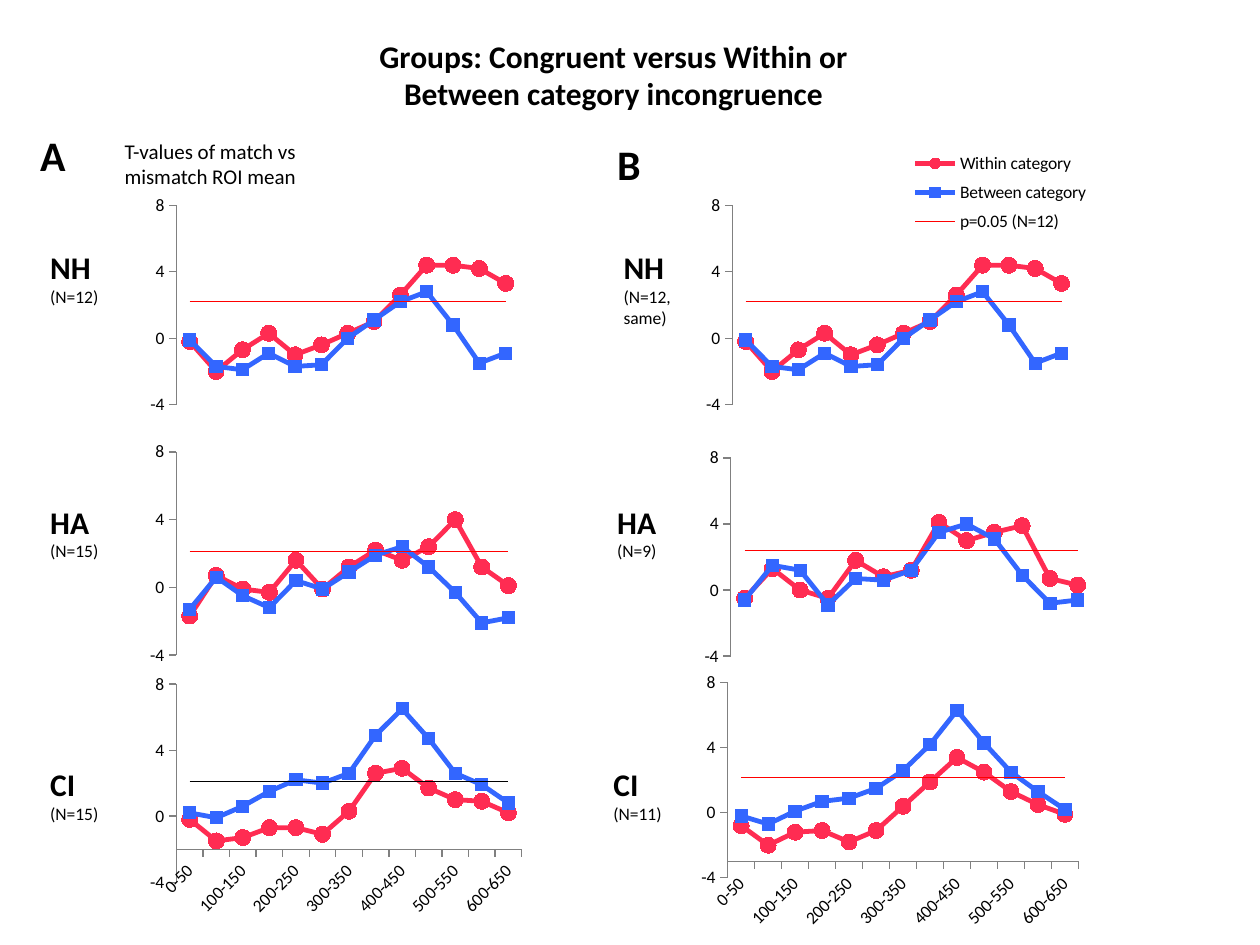
from lxml.etree import SubElement
from pptx import Presentation
from pptx.chart.data import CategoryChartData
from pptx.dml.color import RGBColor
from pptx.enum.chart import XL_CHART_TYPE, XL_LEGEND_POSITION, XL_MARKER_STYLE, XL_TICK_MARK
from pptx.enum.text import MSO_ANCHOR, MSO_AUTO_SIZE, PP_ALIGN
from pptx.oxml import parse_xml
from pptx.oxml.ns import nsdecls, qn
from pptx.util import Inches, Pt

# Content
TITLE = "Groups: Congruent versus Within or Between category incongruence"
FONT, BLACK, GREY, RED = "Calibri", "000000", "808080", "FF0000"
NUMBERS = [str(number) for number in range(1, 14)]
PERIODS = [f"{start}-{start + 50}" for start in range(0, 650, 50)]
PLAIN_NAMES = ["Series 1", "Series 2", "Series 3"]
LEGEND_NAMES = ["Within category", "Between category", "p=0.05 (N=12)"]
SERIES_STYLES = [  # colour, line width, marker, marker size
    ("FF2C52", 2.75, XL_MARKER_STYLE.CIRCLE, 9),
    ("3366FF", 2.75, XL_MARKER_STYLE.SQUARE, 7),
    (RED, 0.5, XL_MARKER_STYLE.NONE, None),
]

NH_WITHIN = [-0.2, -2, -0.7, 0.3, -1, -0.4, 0.3, 1, 2.6, 4.4, 4.4, 4.2, 3.3]
NH_BETWEEN = [-0.1, -1.7, -1.9, -0.9, -1.7, -1.6, 0, 1.1, 2.2, 2.8, 0.8, -1.5, -0.9]

# Chart frame in inches, plot area as fractions of the frame, then the values
CHARTS = [
    dict(frame=(1.07, 3.09, 3.27, 2.5), plot=(0.101, 0.199, 0.838, 0.645),
         within=[-1.7, 0.7, -0.1, -0.3, 1.6, -0.1, 1.2, 2.2, 1.6, 2.4, 4, 1.2, 0.1],
         between=[-1.3, 0.6, -0.5, -1.2, 0.4, -0.1, 0.9, 1.9, 2.4, 1.2, -0.3, -2.1, -1.8],
         threshold=2.1),
    dict(frame=(1.07, 4.89, 3.27, 2.5), plot=(0.101, 0.216, 0.838, 0.629),
         within=[-0.2, -1.5, -1.3, -0.7, -0.7, -1.1, 0.3, 2.6, 2.9, 1.7, 1, 0.9, 0.2],
         between=[0.2, -0.1, 0.6, 1.5, 2.2, 2, 2.6, 4.9, 6.5, 4.7, 2.6, 1.9, 0.8],
         threshold=2.1, threshold_color=BLACK, axis_at=-2),
    dict(frame=(0.83, 0.12, 5.66, 3.66), plot=(0.101, 0.413, 0.48, 0.432),
         within=NH_WITHIN, between=NH_BETWEEN, threshold=2.2),
    dict(frame=(5.36, 5.09, 3.81, 2.7), plot=(0.109, 0.122, 0.731, 0.573),
         within=[-0.8, -2, -1.2, -1.1, -1.8, -1.1, 0.4, 1.9, 3.4, 2.5, 1.3, 0.5, -0.1],
         between=[-0.2, -0.7, 0.1, 0.7, 0.9, 1.5, 2.6, 4.2, 6.3, 4.3, 2.5, 1.3, 0.2],
         threshold=2.2, axis_at=-3),
    dict(frame=(5.52, 3.4, 4, 2.2), plot=(0.07, 0.107, 0.716, 0.715),
         within=[-0.5, 1.3, 0, -0.5, 1.8, 0.8, 1.2, 4.1, 3, 3.5, 3.9, 0.7, 0.3],
         between=[-0.6, 1.5, 1.2, -0.9, 0.7, 0.6, 1.2, 3.5, 4, 3.1, 0.9, -0.8, -0.6],
         threshold=2.4),
    dict(frame=(5.31, 0.12, 5.66, 3.66), plot=(0.089, 0.413, 0.48, 0.432),
         within=NH_WITHIN, between=NH_BETWEEN, threshold=2.2,
         legend=(0.33, 0.28, 0.27, 0.21)),
]

GROUP_LABELS = [  # box in inches, group name, group size lines
    ((0.3, 1.92, 0.59, 0.59), "NH", ["(N=12)"]),
    ((0.3, 3.94, 0.59, 0.79), "HA", ["(N=15)"]),
    ((0.3, 6.02, 0.59, 0.91), "CI", ["(N=15)"]),
    ((4.85, 1.92, 0.58, 0.74), "NH", ["(N=12,", "same)"]),
    ((4.8, 3.94, 0.52, 0.77), "HA", ["(N=9)"]),
    ((4.77, 6.02, 0.59, 0.88), "CI", ["(N=11)"]),
]
PANEL_LETTERS = [((0.22, 0.98, 0.41, 0.5), "A"), ((4.8, 1.05, 0.39, 0.5), "B")]
AXIS_NOTE = ((0.89, 1.05, 1.97, 0.5), "T-values of match vs mismatch ROI mean")


def rgb(color):
    return RGBColor.from_string(color)


def set_font(font, size, bold=False, color=BLACK):
    font.name, font.size, font.bold = FONT, Pt(size), bold
    font.color.rgb = rgb(color)


def write(box, text, size, bold=False, align=PP_ALIGN.LEFT, new=False):
    frame = box.text_frame
    para = frame.add_paragraph() if new else frame.paragraphs[0]
    para.alignment = align
    span = para.add_run()
    span.text = text
    set_font(span.font, size, bold)


def add_box(slide, frame, wrap=False):
    box = slide.shapes.add_textbox(*map(Inches, frame))
    box.text_frame.word_wrap = wrap
    return box


def manual_layout(fractions, inner=False):
    layout = parse_xml(f"<c:layout {nsdecls('c')}><c:manualLayout/></c:layout>")
    settings = [("layoutTarget", "inner")] if inner else []
    settings += [("xMode", "edge"), ("yMode", "edge")]
    settings += zip("xywh", fractions)
    for name, value in settings:
        SubElement(layout[0], qn(f"c:{name}")).set("val", str(value))
    return layout


def no_fill():
    return parse_xml(f"<c:spPr {nsdecls('c', 'a')}><a:noFill/><a:ln><a:noFill/></a:ln></c:spPr>")


def style_axes(chart, axis_at):
    value_axis, category_axis = chart.value_axis, chart.category_axis
    value_axis.minimum_scale, value_axis.maximum_scale = -4, 8
    value_axis.major_unit = 4
    value_axis.has_major_gridlines = False
    for axis in (value_axis, category_axis):
        axis.major_tick_mark = XL_TICK_MARK.OUTSIDE
        axis.format.line.color.rgb = rgb(GREY)
        axis.format.line.width = Pt(0.75)
        set_font(axis.tick_labels.font, 10)
    category_axis.visible = axis_at is not None
    if category_axis.visible:
        value_axis.crosses_at = axis_at
        # Slanted labels, every second one
        body = category_axis.tick_labels.font._element.getparent().getparent().getparent().find(qn("a:bodyPr"))
        body.set("rot", "-2700000")
        skip = parse_xml(f'<c:tickLblSkip {nsdecls("c")} val="2"/>')
        category_axis._element.find(qn("c:noMultiLvlLbl")).addprevious(skip)


def add_line_chart(slide, frame, plot, within, between, threshold,
                   threshold_color=RED, axis_at=None, legend=None):
    data = CategoryChartData()
    data.categories = NUMBERS if axis_at is None else PERIODS
    names = LEGEND_NAMES if legend else PLAIN_NAMES
    for name, values in zip(names, (within, between, [threshold] * len(within))):
        data.add_series(name, values)
    chart = slide.shapes.add_chart(XL_CHART_TYPE.LINE_MARKERS, *map(Inches, frame), data).chart
    chart.has_title = False
    set_font(chart.font, 10)

    # Series
    for series, (color, width, marker, size) in zip(chart.plots[0].series, SERIES_STYLES):
        series.smooth = False
        series.format.line.color.rgb = rgb(color)
        series.format.line.width = Pt(width)
        series.marker.style = marker
        if size:
            series.marker.size = size
            series.marker.format.fill.solid()
            series.marker.format.fill.fore_color.rgb = rgb(color)
            series.marker.format.line.color.rgb = rgb(color)
    chart.plots[0].series[2].format.line.color.rgb = rgb(threshold_color)
    style_axes(chart, axis_at)

    # Legend
    chart.has_legend = legend is not None
    if legend:
        chart.legend.position = XL_LEGEND_POSITION.RIGHT
        chart.legend.include_in_layout = False
        set_font(chart.legend.font, 10)
        element = chart.legend._element
        for old in element.findall(qn("c:layout")):
            element.remove(old)
        element.find(qn("c:legendPos")).addnext(manual_layout(legend))

    # Plot position and clear backgrounds
    space = chart._chartSpace
    area = space.chart.plotArea
    for old in area.findall(qn("c:layout")):
        area.remove(old)
    area.insert(0, manual_layout(plot, inner=True))
    area.append(no_fill())
    space.find(qn("c:txPr")).addprevious(no_fill())


def main():
    deck = Presentation()
    deck.slide_width, deck.slide_height = Inches(10), Inches(7.5)
    slide = deck.slides.add_slide(deck.slide_layouts[5])

    # Title
    title = slide.shapes.title
    title.left, title.top, title.width, title.height = map(Inches, (2.57, 0.24, 4.6, 0.71))
    title.text_frame.word_wrap = True
    title.text_frame.auto_size = MSO_AUTO_SIZE.NONE
    title.text_frame.vertical_anchor = MSO_ANCHOR.TOP
    write(title, TITLE, 18, bold=True, align=PP_ALIGN.CENTER)

    # Charts
    for chart in CHARTS:
        add_line_chart(slide, **chart)

    # Labels
    for frame, group, sizes in GROUP_LABELS:
        box = add_box(slide, frame)
        write(box, group, 18, bold=True)
        for line in sizes:
            write(box, line, 10, new=True)
    for frame, letter in PANEL_LETTERS:
        write(add_box(slide, frame), letter, 24, bold=True)
    frame, note = AXIS_NOTE
    write(add_box(slide, frame, wrap=True), note, 12)

    deck.save("out.pptx")


if __name__ == "__main__":
    main()
